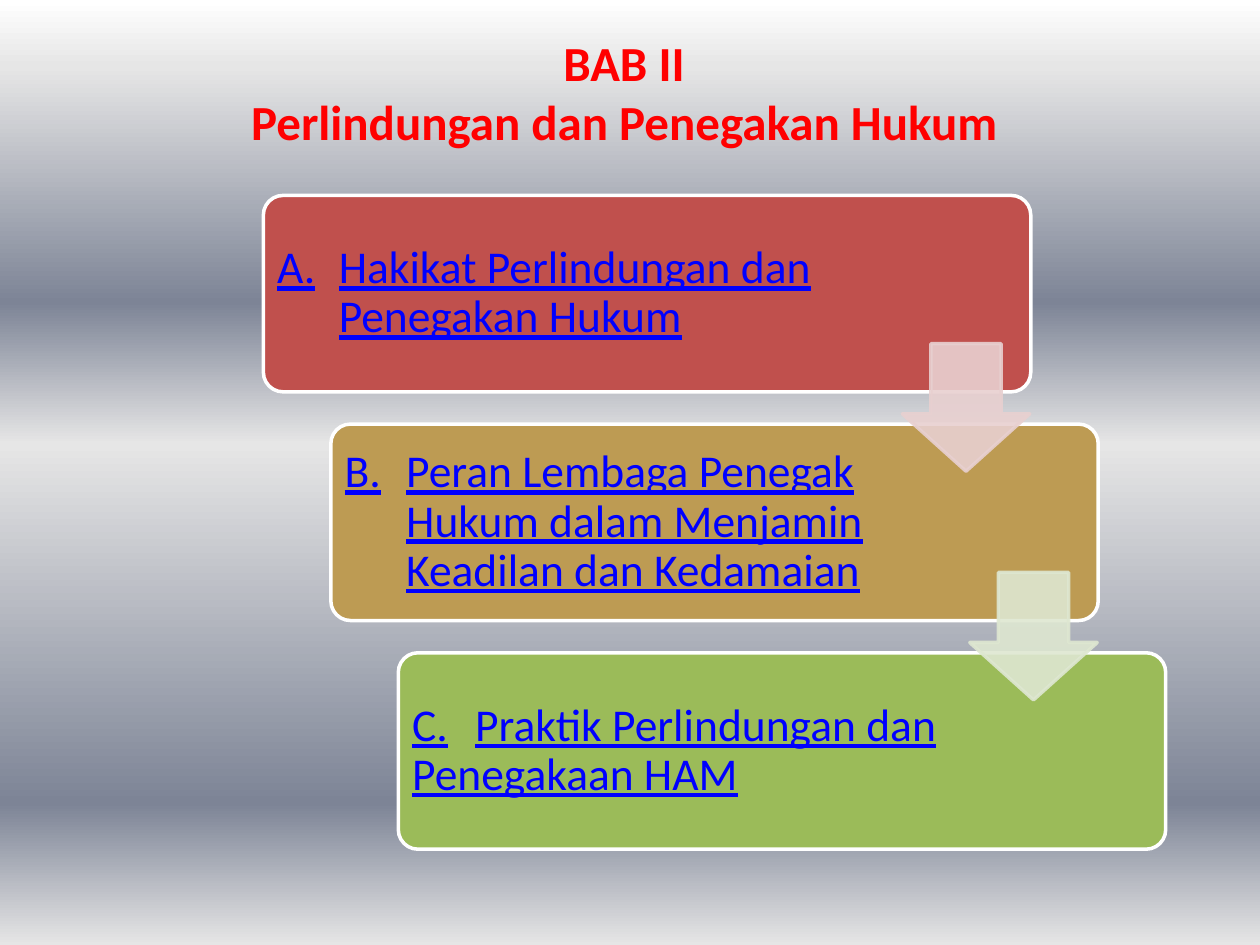
from lxml import etree
from pptx import Presentation
from pptx import util as u
from pptx.dml.color import RGBColor
from pptx.enum import shapes, text
from pptx.oxml.ns import qn

TITLE = ["BAB II", "Perlindungan dan Penegakan Hukum"]
CARDS = [
    ("A.\tHakikat Perlindungan dan Penegakan Hukum", "C0504D", 1.24),
    ("B.\tPeran Lembaga Penegak Hukum dalam Menjamin Keadilan dan Kedamaian", "BD9B53", 1.24),
    ("C.\tPraktik Perlindungan dan Penegakaan HAM", "9BBB59", 0),
]
ARROWS = ["E8D0D0", "DEE7D1"]
THEME = {
    "back": [(0, "FFFFFF"), (7, "E6E6E6"), (32, "7D8496"),
             (47, "E6E6E6"), (85, "7D8496"), (100, "E6E6E6")],
    "edge": "FFFFFF",
    "title": {"name": "Calibri", "size": u.Pt(28), "bold": True, "color": "FF0000"},
    "item": {"name": "Calibri", "size": u.Pt(26), "underline": True, "color": "0000FF"},
}
CARD = (5.31, 3.94, 15.47, 3.96)
ARROW = (18.19, 6.93, 2.57, 2.57)
STEP = (1.36, 4.61)
WIDTH = 11.5
TAB = 1.24
PAD = 0.28


def style(font, look):
    for key, val in look.items():
        if key == "color":
            font.color.rgb = RGBColor.from_string(val)
        else:
            setattr(font, key, val)


def place(box, num):
    left, top, wide, high = box
    return [u.Cm(v) for v in (left + num * STEP[0], top + num * STEP[1], wide, high)]


def draw(slide, kind, spot, adjs, fill, edge):
    form = slide.shapes.add_shape(kind, *spot)
    form.shadow.inherit = False
    for num, val in enumerate(adjs):
        form.adjustments[num] = val
    form.fill.solid()
    form.fill.fore_color.rgb = RGBColor.from_string(fill)
    form.line.color.rgb = RGBColor.from_string(edge)
    form.line.width = u.Pt(2)
    return form


def paint(slide):
    fill = slide.background.fill
    fill.gradient()
    fill.gradient_angle = 270
    stops = slide.element.find(".//" + qn("a:gsLst"))
    for old in list(stops):
        stops.remove(old)
    for pos, hue in THEME["back"]:
        stop = etree.SubElement(stops, qn("a:gs"), pos=str(pos * 1000))
        etree.SubElement(stop, qn("a:srgbClr"), val=hue)


def head(slide):
    title = slide.shapes.title
    spot = {"left": 4.72, "top": 0.53, "width": 15.72, "height": 2.64}
    for key, val in spot.items():
        setattr(title, key, u.Cm(val))
    frame = title.text_frame
    frame.text = "\n".join(TITLE)
    frame.word_wrap = False
    frame.auto_size = text.MSO_AUTO_SIZE.NONE
    frame.vertical_anchor = text.MSO_ANCHOR.TOP
    for para in frame.paragraphs:
        para.alignment = text.PP_ALIGN.CENTER
        style(para.runs[0].font, THEME["title"])


def label(slide, spot, words, hang):
    frame = slide.shapes.add_textbox(*spot).text_frame
    frame.word_wrap = True
    frame.vertical_anchor = text.MSO_ANCHOR.MIDDLE
    for side in ("left", "right", "top", "bottom"):
        setattr(frame, "margin_" + side, u.Cm(PAD))
    para = frame.paragraphs[0]
    props = para._p.get_or_add_pPr()
    props.set("marL", str(u.Cm(hang)))
    props.set("indent", str(-u.Cm(hang)))
    tabs = etree.SubElement(props, qn("a:tabLst"))
    etree.SubElement(tabs, qn("a:tab"), pos=str(u.Cm(TAB)), algn="l")
    para.line_spacing = 0.9
    run = para.add_run()
    run.text = words
    style(run.font, THEME["item"])


def main():
    deck = Presentation()
    deck.slide_width, deck.slide_height = u.Cm(25.4), u.Cm(19.05)
    slide = deck.slides.add_slide(deck.slide_layouts[5])
    paint(slide)
    head(slide)
    kinds = shapes.MSO_SHAPE
    for num, (words, hue, hang) in enumerate(CARDS):
        spot = place(CARD, num)
        draw(slide, kinds.ROUNDED_RECTANGLE, spot, [0.1], hue, THEME["edge"])
        label(slide, [*spot[:2], u.Cm(WIDTH), spot[3]], words, hang)
    for num, hue in enumerate(ARROWS):
        form = draw(slide, kinds.DOWN_ARROW, place(ARROW, num), [0.55, 0.45], hue, hue)
        for tint in form._element.spPr.iter(qn("a:srgbClr")):
            etree.SubElement(tint, qn("a:alpha"), val="90000")
        form.adjustments[0], form.adjustments[1] = 0.55, 0.45
    deck.save("out.pptx")


if __name__ == "__main__":
    main()
